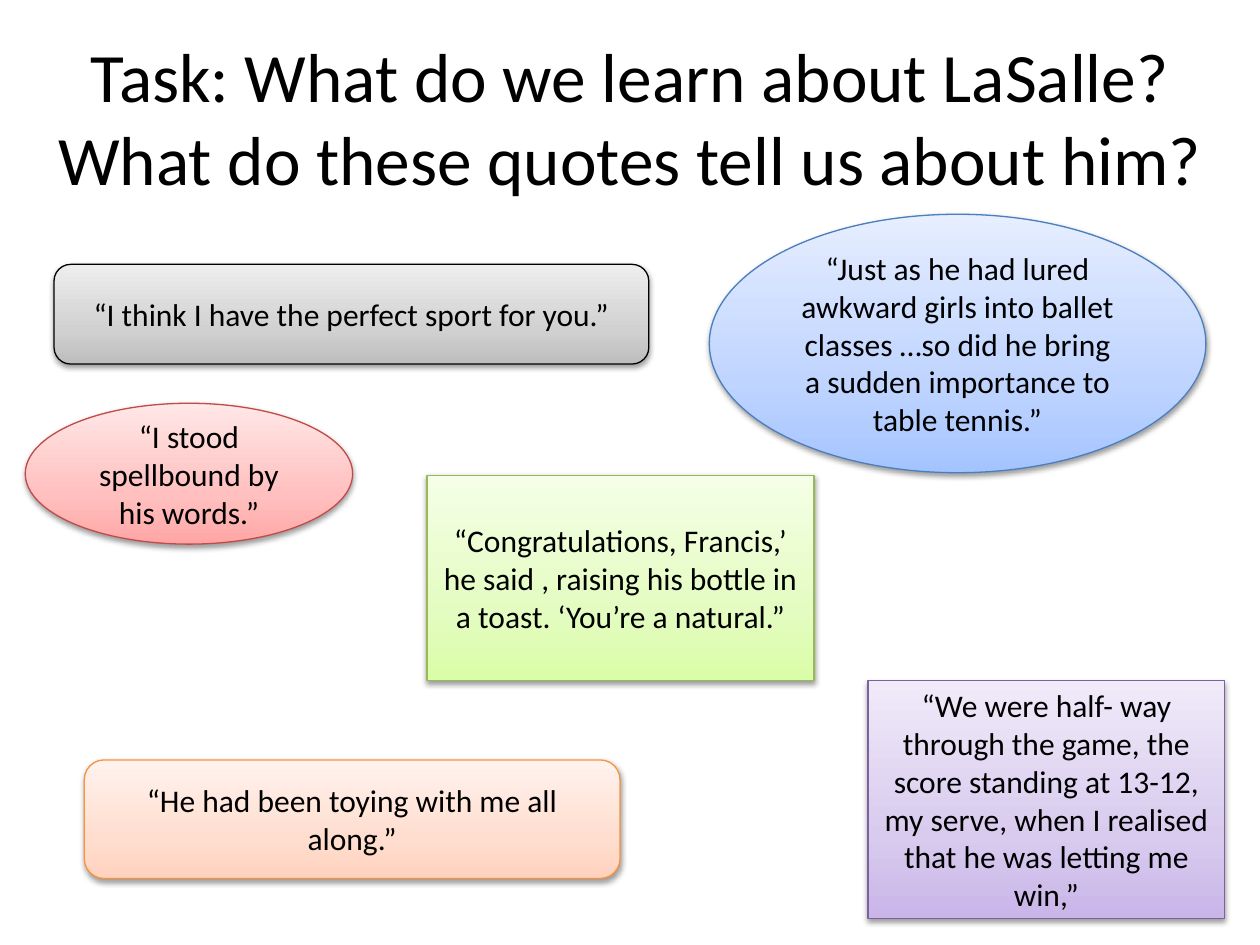
from copy import deepcopy

from lxml import etree
from pptx import Presentation
from pptx import util as u
from pptx.dml.color import RGBColor
from pptx.enum import shapes, text
from pptx.oxml.ns import qn

KIND = shapes.MSO_SHAPE
STOPS = (0, 0.35, 1)


def colour(code):
    return RGBColor.from_string(code)


class QuoteSlide:
    font = "Calibri"
    ink = "000000"
    title_size = 39.6
    quote_size = 18

    def __init__(self, deck):
        self.slide = deck.slides.add_slide(deck.slide_layouts[6])

    def label(self, shape, words, size):
        frame = shape.text_frame
        frame.word_wrap = True
        frame.vertical_anchor = text.MSO_ANCHOR.MIDDLE
        para = frame.paragraphs[0]
        para.text = words
        para.alignment = text.PP_ALIGN.CENTER
        para.font.name = self.font
        para.font.size = u.Pt(size)
        para.font.color.rgb = colour(self.ink)

    def title(self, place, words):
        box = self.slide.shapes.add_textbox(*map(u.Cm, place))
        self.label(box, words, self.title_size)

    def quote(self, kind, place, shades, outline, words):
        shape = self.slide.shapes.add_shape(kind, *map(u.Cm, place))
        self.shade(shape, shades)
        shape.line.color.rgb = colour(outline)
        shape.line.width = u.Pt(0.75)
        self.shadow(shape)
        self.label(shape, words, self.quote_size)

    def shade(self, shape, shades):
        shape.fill.gradient()
        shape.fill.gradient_angle = 90
        stop_list = shape._element.spPr.find(".//" + qn("a:gsLst"))
        stop_list.insert(1, deepcopy(stop_list[0]))
        for stop, position, shade in zip(shape.fill.gradient_stops, STOPS, shades):
            stop.position = position
            stop.color.rgb = colour(shade)

    def shadow(self, shape):
        shape.shadow.inherit = False
        effects = shape._element.spPr.find(qn("a:effectLst"))
        outer = etree.SubElement(
            effects, qn("a:outerShdw"), blurRad="40000", dist="20000",
            dir="5400000", rotWithShape="0")
        black = etree.SubElement(outer, qn("a:srgbClr"), val=self.ink)
        etree.SubElement(black, qn("a:alpha"), val="38000")


QUOTES = [
    (KIND.ROUNDED_RECTANGLE, (1.09, 5.33, 11.99, 2.01),
     ("BDBDBD", "D1D1D1", "EEEEEE"), "000000",
     "“I think I have the perfect sport for you.”"),
    (KIND.RECTANGLE, (8.61, 9.58, 7.8, 4.14),
     ("DAFDA7", "E4FCC2", "F5FFE7"), "98B955",
     "“Congratulations, Francis,’ he said , raising his bottle in a toast. "
     "‘You’re a natural.”"),
    (KIND.OVAL, (14.3, 4.32, 10.01, 5.21),
     ("A4C4FF", "BFD4FF", "E6EEFF"), "4B7EBC",
     "“Just as he had lured awkward girls into ballet classes …so did he bring "
     "a sudden importance to table tennis.”"),
    (KIND.RECTANGLE, (17.5, 13.72, 7.19, 4.8),
     ("C9B5E8", "D8CBEE", "F0EAF9"), "7D60A0",
     "“We were half- way through the game, the score standing at 13-12, "
     "my serve, when I realised that he was letting me win,”"),
    (KIND.ROUNDED_RECTANGLE, (1.7, 15.32, 10.8, 2.39),
     ("FFD2BD", "FFDED0", "FFF2ED"), "F69240",
     "“He had been toying with me all along.”"),
    (KIND.OVAL, (0.51, 8.13, 6.6, 2.84),
     ("FFA6A5", "FFC0BF", "FFE7E7"), "BF4C48",
     "“I stood spellbound by his words.”"),
]


def main():
    deck = Presentation()
    deck.slide_width = u.Cm(25.4)
    deck.slide_height = u.Cm(19.05)
    page = QuoteSlide(deck)
    page.title((0, 0.76, 25.4, 3.18),
               "Task: What do we learn about LaSalle? "
               "What do these quotes tell us about him?")
    for quote in QUOTES:
        page.quote(*quote)
    deck.save("out.pptx")


if __name__ == "__main__":
    main()
